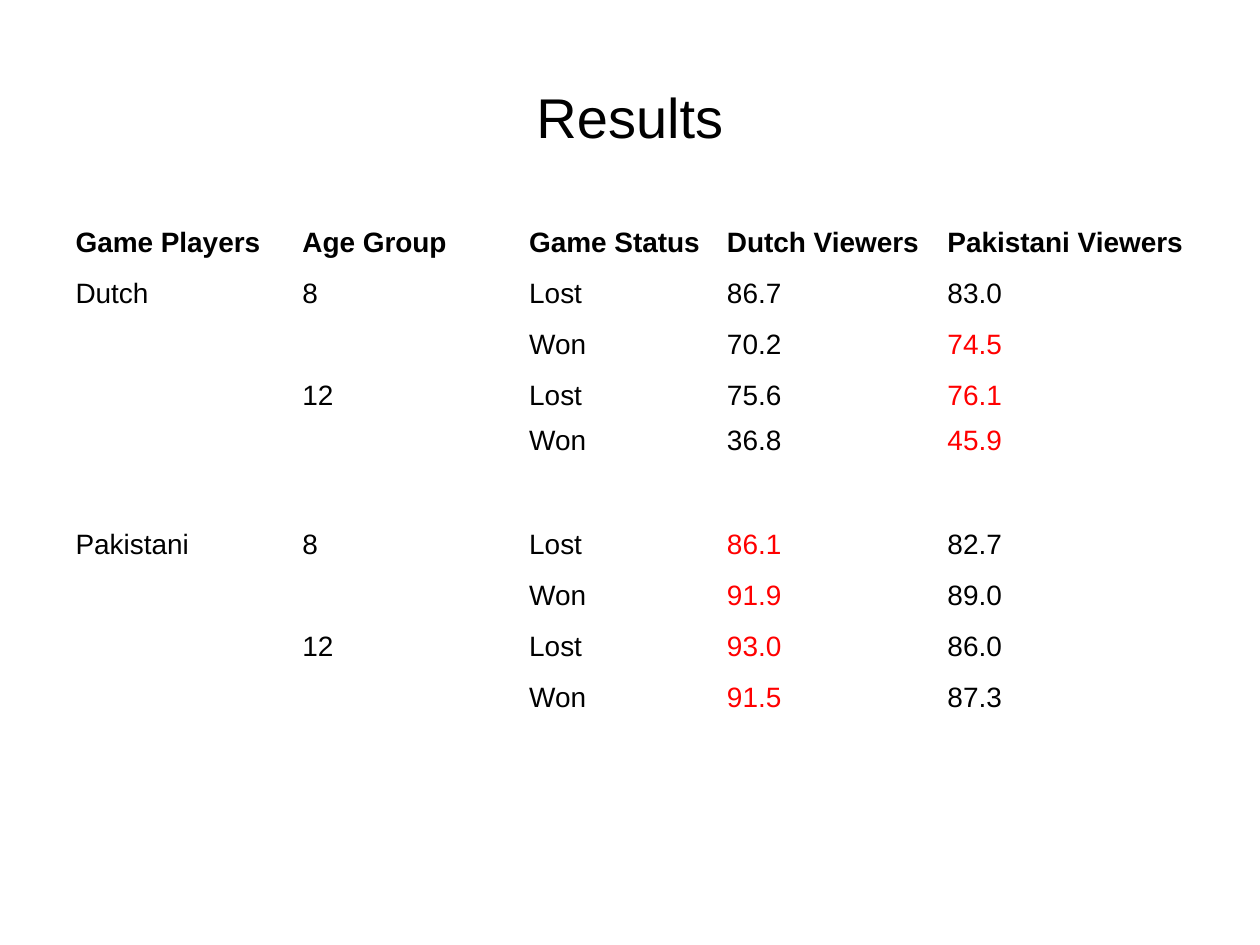
from dataclasses import dataclass

from pptx import Presentation
from pptx.dml.color import RGBColor
from pptx.enum.text import MSO_ANCHOR as Anchor, PP_ALIGN as Align
from pptx.util import Inches, Pt


@dataclass(frozen=True)
class Theme:
    """Colours and type of the slide."""
    font: str = "Arial"
    ink: RGBColor = RGBColor(0, 0, 0)
    accent: RGBColor = RGBColor(255, 0, 0)
    title: Pt = Pt(32)
    body: Pt = Pt(16)


THEME = Theme()
COLUMN_WIDTHS = (1.8, 1.8, 1.57, 1.75, 2.08)
TABLE_HEIGHT = 4.02
GAP_ROW = 4
GAP_HEIGHT = 0.37
ROWS = (
    ("Game Players", "Age Group", "Game Status", "Dutch Viewers", "Pakistani Viewers"),
    ("Dutch", "8", "Lost", "86.7", "83.0"),
    ("", "", "Won", "70.2", "74.5"),
    ("", "12", "Lost", "75.6", "76.1"),
    ("", "", "Won", "36.8", "45.9"),
    ("", "", "", "", ""),
    ("Pakistani", "8", "Lost", "86.1", "82.7"),
    ("", "", "Won", "91.9", "89.0"),
    ("", "12", "Lost", "93.0", "86.0"),
    ("", "", "Won", "91.5", "87.3"),
)
HIGHLIGHTS = {"74.5", "76.1", "45.9", "86.1", "91.9", "93.0", "91.5"}


def add_span(para, text, size, color=THEME.ink, bold=False):
    """Add one styled run to a paragraph."""
    span = para.add_run()
    span.text = text
    span.font.name = THEME.font
    span.font.size = size
    span.font.bold = bold
    span.font.color.rgb = color


def add_title(page, text):
    """Add the centred slide title."""
    box = page.shapes.add_textbox(Inches(0.5), Inches(0.3), Inches(9), Inches(1.25))
    frame = box.text_frame
    frame.word_wrap = True
    frame.vertical_anchor = Anchor.MIDDLE
    para = frame.paragraphs[0]
    para.alignment = Align.CENTER
    add_span(para, text, THEME.title)


def add_results(page):
    """Add the plain results table."""
    table = page.shapes.add_table(
        len(ROWS), len(COLUMN_WIDTHS), Inches(0.5), Inches(1.75),
        Inches(sum(COLUMN_WIDTHS)), Inches(TABLE_HEIGHT)).table
    table.first_row = table.horz_banding = False
    for column, width in zip(table.columns, COLUMN_WIDTHS):
        column.width = Inches(width)
    row_height = (TABLE_HEIGHT - GAP_HEIGHT) / (len(ROWS) - 1)
    for index, values in enumerate(ROWS):
        is_gap = index == GAP_ROW
        table.rows[index].height = Inches(GAP_HEIGHT if is_gap else row_height)
        for cell, value in zip(table.rows[index].cells, values):
            cell.fill.background()
            if is_gap:
                cell.margin_top = 0
            if value:
                color = THEME.accent if value in HIGHLIGHTS else THEME.ink
                add_span(cell.text_frame.paragraphs[0], value, THEME.body, color,
                         bold=index == 0)


def main():
    """Build and save the deck."""
    deck = Presentation()
    deck.slide_width, deck.slide_height = Inches(10), Inches(7.5)
    page = deck.slides.add_slide(deck.slide_layouts[6])
    add_title(page, "Results")
    add_results(page)
    deck.save("out.pptx")


if __name__ == "__main__":
    main()
